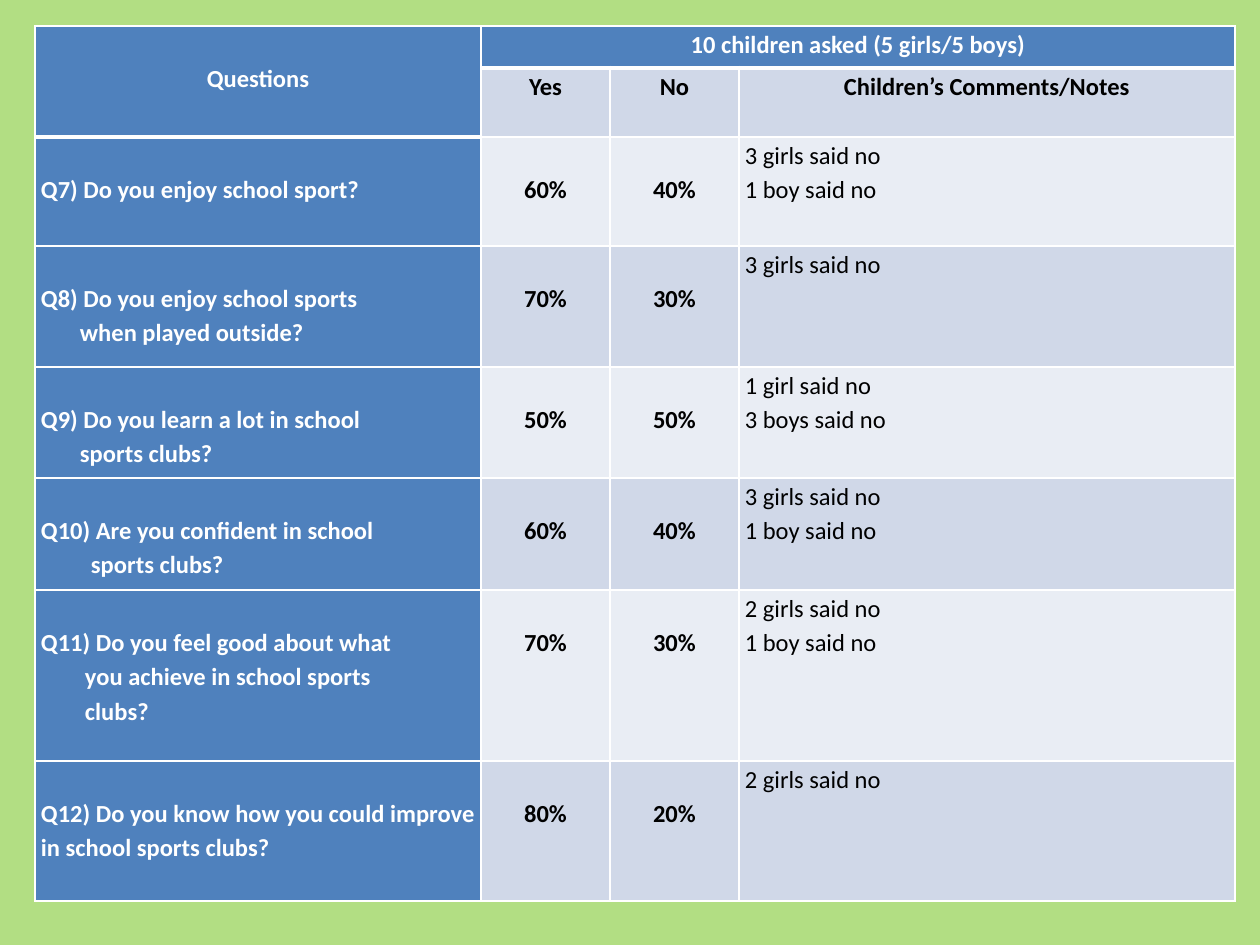
from lxml import etree
from pptx import Presentation
from pptx.dml.color import RGBColor
from pptx.enum.text import PP_ALIGN
from pptx.oxml.ns import qn
from pptx.util import Emu, Pt

LEFT, CENTER = PP_ALIGN.LEFT, PP_ALIGN.CENTER
PX = 914400 // 126
BACKGROUND, BLUE, WHITE, BLACK = "B2DE83", "4F81BD", "FFFFFF", "000000"
BANDS = ["E9EDF4", "D0D8E8"]
TABLE_LEFT, TABLE_TOP = 35, 26
COLUMN_WIDTHS = [446, 129, 129, 496]
ROW_HEIGHTS = [42, 69, 109, 121, 111, 112, 171, 140]
LINE_HEIGHT, SIDE_MARGIN = 34, 6

GROUP_HEADING = "10 children asked (5 girls/5 boys)"
COLUMN_HEADINGS = ["Questions", "Yes", "No", "Children’s Comments/Notes"]
ANSWERS = [
    (["Q7) Do you enjoy school sport?"], 0, "60%", "40%",
     ["3 girls said no", "1 boy said no"]),
    (["Q8) Do you enjoy school sports", "when played outside?"], 39, "70%", "30%",
     ["3 girls said no"]),
    (["Q9) Do you learn a lot in school", "sports clubs?"], 39, "50%", "50%",
     ["1 girl said no", "3 boys said no"]),
    (["Q10) Are you confident in school", "sports clubs?"], 50, "60%", "40%",
     ["3 girls said no", "1 boy said no"]),
    (["Q11) Do you feel good about what", "you achieve in school sports", "clubs?"],
     44, "70%", "30%", ["2 girls said no", "1 boy said no"]),
    (["Q12) Do you know how you could improve in school sports clubs?"], 0,
     "80%", "20%", ["2 girls said no"]),
]


def px(length):
    return Emu(length * PX)


def rgb(color):
    return RGBColor.from_string(color)


def write_cell(cell, lines, fill, color=BLACK, align=CENTER, bold=True, lead=0, indent=0):
    cell.fill.solid()
    cell.fill.fore_color.rgb = rgb(fill)
    cell.margin_left = cell.margin_right = px(SIDE_MARGIN)
    cell.margin_top, cell.margin_bottom = px(lead), 0
    cell.text_frame.text = "\n".join(lines)
    for number, paragraph in enumerate(cell.text_frame.paragraphs):
        paragraph.alignment = align
        paragraph.line_spacing = 1.15
        if number and indent:
            paragraph._p.get_or_add_pPr().set("marL", str(px(indent)))
        for run in paragraph.runs:
            run.font.name, run.font.size, run.font.bold = "Calibri", Pt(14), bold
            run.font.color.rgb = rgb(color)


def draw_borders(cell, top, bottom):
    properties = cell._tc.get_or_add_tcPr()
    widths = {"a:lnL": 1, "a:lnR": 1, "a:lnT": top, "a:lnB": bottom}
    for position, (tag, width) in enumerate(widths.items()):
        line = etree.Element(qn(tag), w=str(Pt(width)))
        fill = etree.SubElement(line, qn("a:solidFill"))
        etree.SubElement(fill, qn("a:srgbClr"), val=WHITE)
        properties.insert(position, line)


def main():
    """Build the slide with the children's survey table."""
    deck = Presentation()
    deck.slide_width, deck.slide_height = px(1260), px(945)
    slide = deck.slides.add_slide(deck.slide_layouts[6])
    slide.background.fill.solid()
    slide.background.fill.fore_color.rgb = rgb(BACKGROUND)

    survey = slide.shapes.add_table(
        len(ROW_HEIGHTS), len(COLUMN_WIDTHS), px(TABLE_LEFT), px(TABLE_TOP),
        px(sum(COLUMN_WIDTHS)), px(sum(ROW_HEIGHTS))).table
    for column, width in zip(survey.columns, COLUMN_WIDTHS):
        column.width = px(width)
    for row, height in zip(survey.rows, ROW_HEIGHTS):
        row.height = px(height)

    survey.cell(0, 0).merge(survey.cell(1, 0))
    survey.cell(0, 1).merge(survey.cell(0, 3))
    write_cell(survey.cell(0, 0), COLUMN_HEADINGS[:1], BLUE, WHITE, lead=LINE_HEIGHT)
    write_cell(survey.cell(0, 1), [GROUP_HEADING], BLUE, WHITE)
    for column, heading in enumerate(COLUMN_HEADINGS[1:], 1):
        write_cell(survey.cell(1, column), [heading], BANDS[1])

    for row, (question, indent, yes, no, comments) in enumerate(ANSWERS, 2):
        band = BANDS[row % 2]
        write_cell(survey.cell(row, 0), question, BLUE, WHITE, LEFT,
                   lead=LINE_HEIGHT, indent=indent)
        for column, share in enumerate([yes, no], 1):
            write_cell(survey.cell(row, column), [share], band, lead=LINE_HEIGHT)
        write_cell(survey.cell(row, 3), comments, band, align=LEFT, bold=False)

    for row in range(len(ROW_HEIGHTS)):
        for column in range(len(COLUMN_WIDTHS)):
            header_rows = 1 if column else 2
            draw_borders(survey.cell(row, column),
                         top=3 if row == header_rows else 1,
                         bottom=3 if row < header_rows else 1)

    deck.save("out.pptx")


if __name__ == "__main__":
    main()
